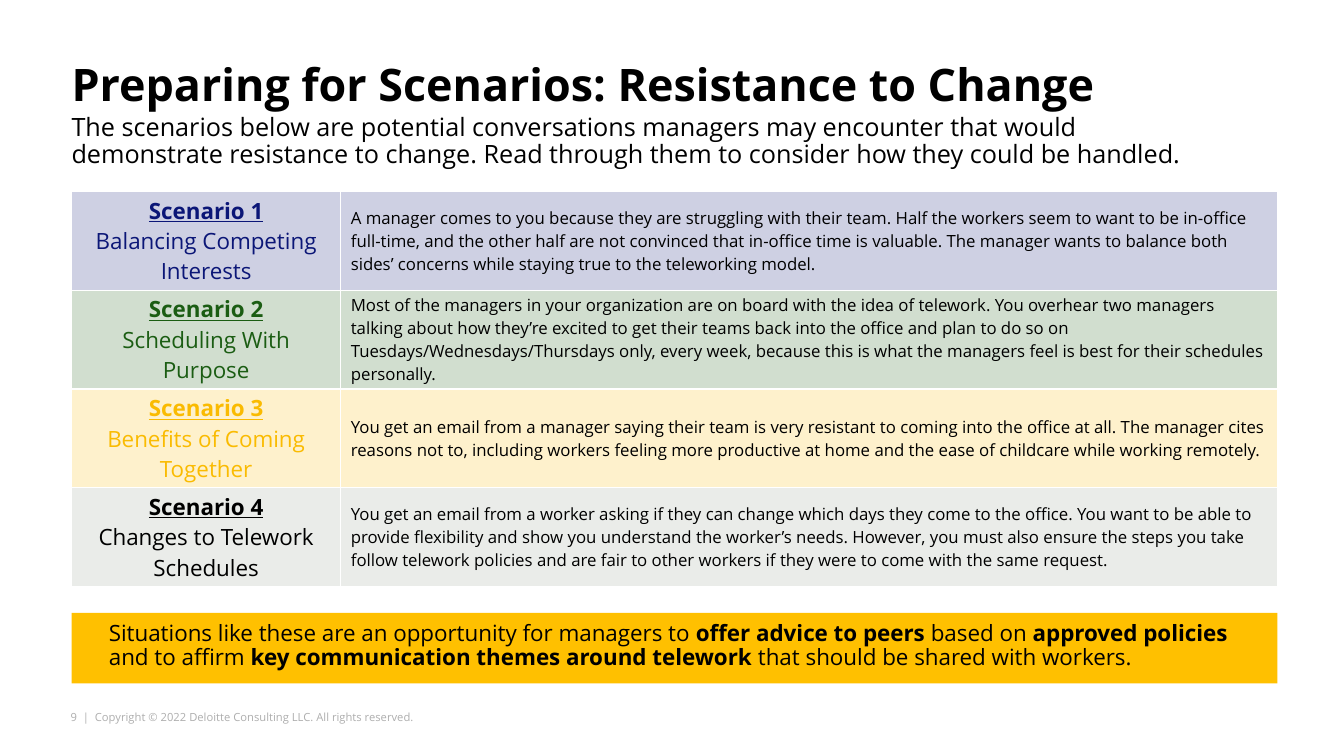
"""Build the slide on scenarios of resistance to change."""
from dataclasses import dataclass

from lxml import etree
from pptx import Presentation
from pptx.dml.color import RGBColor
from pptx.enum.shapes import MSO_SHAPE
from pptx.enum.text import MSO_ANCHOR, PP_ALIGN
from pptx.oxml.ns import qn
from pptx.util import Inches, Pt

RECT = MSO_SHAPE.RECTANGLE
TOP, MIDDLE = MSO_ANCHOR.TOP, MSO_ANCHOR.MIDDLE
LEFT, CENTER = PP_ALIGN.LEFT, PP_ALIGN.CENTER


@dataclass(frozen=True)
class Theme:
    """Colours, font and type sizes."""
    font: str = "Open Sans"
    ink: str = "000000"
    paper: str = "FFFFFF"
    gold: str = "FFC000"
    mute: str = "AEAEAE"
    title: int = 32
    lead: int = 18
    label: int = 16
    body: int = 12
    foot: int = 8
    tint: int = 20


THEME = Theme()

CASES = [
    ("Balancing Competing Interests", "0B1677", "0B1677",
     "A manager comes to you because they are struggling with their team. "
     "Half the workers seem to want to be in-office full-time, and the other "
     "half are not convinced that in-office time is valuable. The manager "
     "wants to balance both sides’ concerns while staying true to the "
     "teleworking model."),
    ("Scheduling With Purpose", "1B5D13", "1B5D13",
     "Most of the managers in your organization are on board with the idea "
     "of telework. You overhear two managers talking about how they’re "
     "excited to get their teams back into the office and plan to do so on "
     "Tuesdays/Wednesdays/Thursdays only, every week, because this is what "
     "the managers feel is best for their schedules personally."),
    ("Benefits of Coming Together", "FABB01", "FABB01",
     "You get an email from a manager saying their team is very resistant to "
     "coming into the office at all. The manager cites reasons not to, "
     "including workers feeling more productive at home and the ease of "
     "childcare while working remotely."),
    ("Changes to Telework Schedules", THEME.ink, "9AA094",
     "You get an email from a worker asking if they can change which days "
     "they come to the office. You want to be able to provide flexibility "
     "and show you understand the worker’s needs. However, you must also "
     "ensure the steps you take follow telework policies and are fair to "
     "other workers if they were to come with the same request."),
]

CALL = [
    ("Situations like these are an opportunity for managers to ", False),
    ("offer advice to peers ", True),
    ("based on ", False),
    ("approved policies ", True),
    ("and to affirm ", False),
    ("key communication themes around telework ", True),
    ("that should be shared with workers.", False),
]


def write(para, text, size, color=THEME.ink, bold=False, line=False,
          align=LEFT, pitch=None):
    """Add a formatted run to a paragraph."""
    para.alignment = align
    if pitch:
        para.line_spacing = pitch
    run = para.add_run()
    run.text = text
    font = run.font
    font.name, font.size = THEME.font, Pt(size)
    font.bold, font.underline = bold, line
    font.color.rgb = RGBColor.from_string(color)


class Deck:
    """Holds the style and the current slide."""

    def __init__(self, theme):
        self.theme = theme
        self.show = Presentation()
        self.show.slide_width = Inches(13.33)
        self.show.slide_height = Inches(7.5)
        self.slide = self.show.slides.add_slide(self.show.slide_layouts[5])

    def frame(self, shape, wrap=True):
        """Clear the margins of a shape and return its first paragraph."""
        box = shape.text_frame
        box.margin_left = box.margin_right = 0
        box.margin_top = box.margin_bottom = 0
        box.word_wrap, box.vertical_anchor = wrap, TOP
        return box.paragraphs[0]

    def title(self, text, area):
        """Place and fill the title."""
        shape = self.slide.shapes.title
        shape.left, shape.top, shape.width, shape.height = map(Inches, area)
        write(self.frame(shape), text, self.theme.title, bold=True, pitch=0.9)

    def text(self, runs, area, size, color=THEME.ink, wrap=True, pitch=None):
        """Add a text box of plain and bold runs."""
        box = self.slide.shapes.add_textbox(*map(Inches, area))
        para = self.frame(box, wrap)
        for text, bold in runs:
            write(para, text, size, color, bold, pitch=pitch)

    def bar(self, area, color):
        """Add a filled rectangle."""
        shape = self.slide.shapes.add_shape(RECT, *map(Inches, area))
        shape.shadow.inherit = False
        shape.fill.solid()
        shape.fill.fore_color.rgb = RGBColor.from_string(color)
        shape.line.fill.background()

    def cell(self, cell, color):
        """Tint a cell, give it borders and return its text frame."""
        cell.margin_top = cell.margin_bottom = Inches(0.02)
        cell.vertical_anchor = MIDDLE
        cell.fill.solid()
        cell.fill.fore_color.rgb = RGBColor.from_string(color)
        props = cell._tc.get_or_add_tcPr()
        tone = props.find(".//" + qn("a:srgbClr"))
        etree.SubElement(tone, qn("a:alpha"), val=str(self.theme.tint * 1000))
        for spot, side in enumerate(("lnL", "lnR", "lnT", "lnB")):
            edge = etree.Element(qn("a:" + side), w=str(Pt(1)))
            fill = etree.SubElement(edge, qn("a:solidFill"))
            etree.SubElement(fill, qn("a:srgbClr"), val=self.theme.paper)
            props.insert(spot, edge)
        return cell.text_frame

    def table(self, cases, area, widths):
        """Add the table of scenarios."""
        grid = self.slide.shapes.add_table(
            len(cases), len(widths), *map(Inches, area)).table
        grid.first_row = grid.horz_banding = False
        for col, width in zip(grid.columns, widths):
            col.width = Inches(width)
        size = self.theme.label
        for row, (name, color, tint, story) in enumerate(cases):
            head = self.cell(grid.cell(row, 0), tint)
            write(head.paragraphs[0], f"Scenario {row + 1}", size, color,
                  bold=True, line=True, align=CENTER)
            write(head.add_paragraph(), name, size, color, align=CENTER)
            body = self.cell(grid.cell(row, 1), tint)
            write(body.paragraphs[0], story, self.theme.body)


def main():
    """Build and save the slide."""
    deck = Deck(THEME)
    deck.text([("9  |  Copyright © 2022 Deloitte Consulting LLC. "
                "All rights reserved.", False)],
              (0.7, 7.05, 3.49, 0.13), THEME.foot, THEME.mute, wrap=False)
    deck.bar((0.71, 6.08, 11.96, 0.7), THEME.gold)
    deck.title("Preparing for Scenarios: Resistance to Change",
               (0.71, 0.62, 10.64, 0.65))
    deck.text([("The scenarios below are potential conversations managers may "
                "encounter that would demonstrate resistance to change. Read "
                "through them to consider how they could be handled.", False)],
              (0.71, 1.14, 11.44, 0.61), THEME.lead, pitch=0.9)
    deck.table(CASES, (0.71, 1.9, 11.96, 3.92), (2.67, 9.29))
    deck.text(CALL, (1.08, 6.17, 11.43, 0.54), THEME.label, pitch=0.9)
    deck.show.save("out.pptx")


if __name__ == "__main__":
    main()
